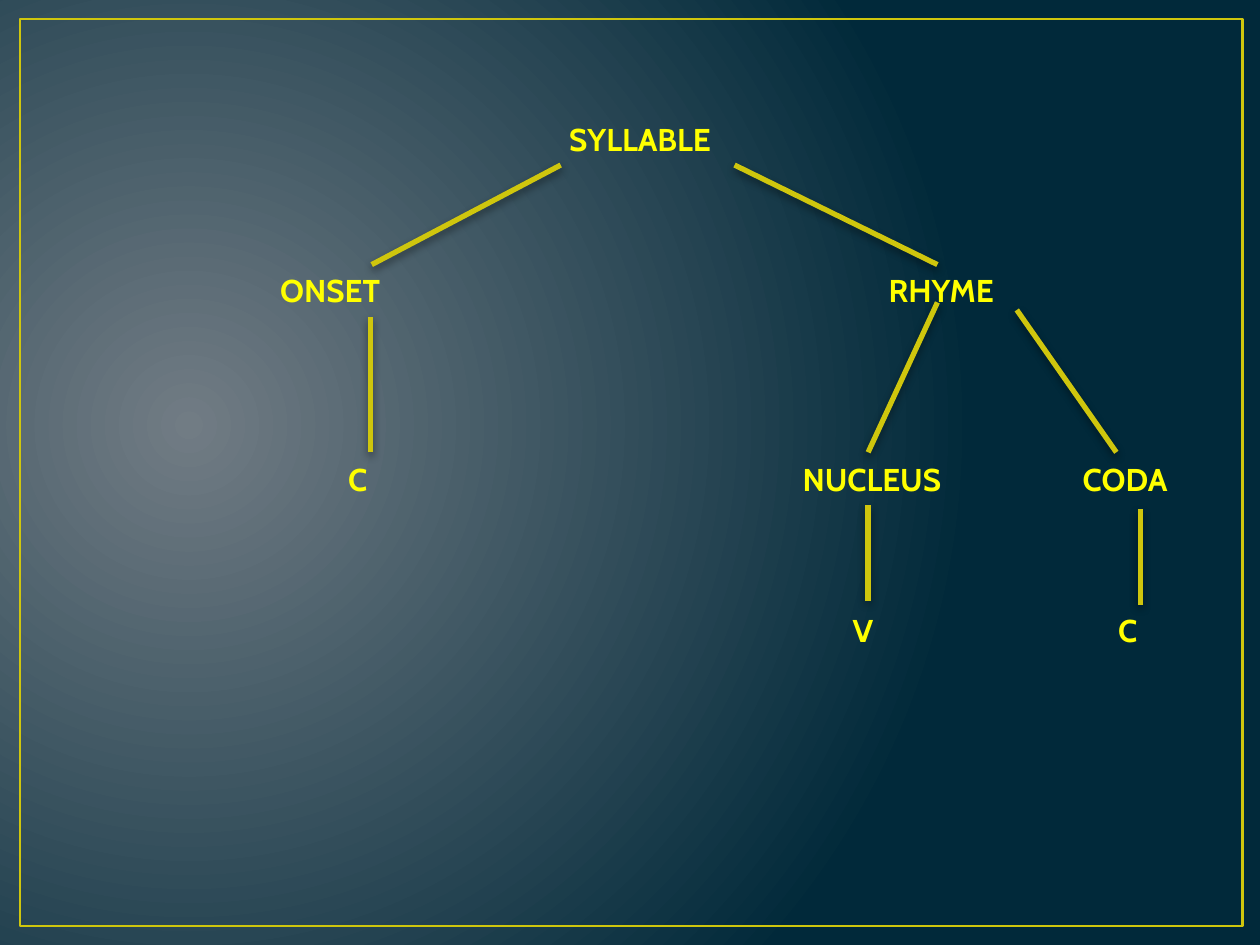
from pptx import Presentation
from pptx.dml.color import RGBColor
from pptx.enum.shapes import MSO_CONNECTOR as Connector, MSO_SHAPE as Shape
from pptx.enum.text import MSO_ANCHOR as Anchor, PP_ALIGN as Align
from pptx.oxml import parse_xml
from pptx.oxml.ns import nsdecls, qn
from pptx.util import Inches, Pt

GOLD = RGBColor(0xCF, 0xC6, 0x0D)
YELLOW = RGBColor(0xFF, 0xFF, 0x00)
GREY = RGBColor(0x71, 0x7C, 0x84)
NAVY = RGBColor(0x01, 0x29, 0x3A)

LABEL_FONT = {"name": "Cabin", "size": Pt(18), "bold": True}
LABEL_FRAME = {
    "word_wrap": True, "vertical_anchor": Anchor.MIDDLE,
    "margin_left": 0, "margin_right": 0, "margin_top": 0, "margin_bottom": 0,
}
LABEL_WIDTH, LABEL_HEIGHT = 1.6, 0.3
ROOT_ROW, BRANCH_ROW, PART_ROW, SOUND_ROW = 1.1, 2.3, 3.8, 5.0

LABELS = [
    ("SYLLABLE", 5.08, ROOT_ROW),
    ("ONSET", 2.62, BRANCH_ROW),
    ("RHYME", 7.47, BRANCH_ROW),
    ("C", 2.84, PART_ROW),
    ("NUCLEUS", 6.92, PART_ROW),
    ("CODA", 8.93, PART_ROW),
    ("V", 6.85, SOUND_ROW),
    ("C", 8.95, SOUND_ROW),
]
BRANCHES = [
    (4.45, 1.31, 2.95, 2.1),
    (5.83, 1.31, 7.44, 2.1),
    (2.94, 2.52, 2.94, 3.59),
    (6.89, 4.01, 6.89, 4.77),
    (9.05, 4.04, 9.05, 4.8),
    (7.44, 2.4, 6.89, 3.59),
    (8.07, 2.46, 8.86, 3.59),
]
RADIAL = f"""<a:path {nsdecls('a')} path="circle">
  <a:fillToRect l="15000" t="50000" r="85000" b="60000"/>
</a:path>"""
SHADOW = f"""<a:effectLst {nsdecls('a')}>
  <a:outerShdw blurRad="{Pt(5)}" dist="{Pt(2)}" dir="5400000" rotWithShape="0">
    <a:srgbClr val="000000"><a:alpha val="43000"/></a:srgbClr>
  </a:outerShdw>
</a:effectLst>"""

presentation = Presentation()
presentation.slide_width = Inches(10)
presentation.slide_height = Inches(7.5)
slide = presentation.slides.add_slide(presentation.slide_layouts[6])

background = slide.background.fill
background.gradient()
for stop, position, color in zip(background.gradient_stops, (0, 1), (GREY, NAVY)):
    stop.position = position
    stop.color.rgb = color
gradient = slide.element.find(".//" + qn("a:gradFill"))
gradient.replace(gradient.find(qn("a:lin")), parse_xml(RADIAL))

border = slide.shapes.add_shape(
    Shape.RECTANGLE, Inches(0.16), Inches(0.15), Inches(9.7), Inches(7.2))
border.shadow.inherit = False
border.fill.background()
border.line.color.rgb = GOLD
border.line.width = Pt(1.5)

for text, center, middle in LABELS:
    label = slide.shapes.add_textbox(
        Inches(center - LABEL_WIDTH / 2), Inches(middle - LABEL_HEIGHT / 2),
        Inches(LABEL_WIDTH), Inches(LABEL_HEIGHT))
    for name, value in LABEL_FRAME.items():
        setattr(label.text_frame, name, value)
    paragraph = label.text_frame.paragraphs[0]
    paragraph.alignment = Align.CENTER
    run = paragraph.add_run()
    run.text = text
    for name, value in LABEL_FONT.items():
        setattr(run.font, name, value)
    run.font.color.rgb = YELLOW

for ends in BRANCHES:
    branch = slide.shapes.add_connector(Connector.STRAIGHT, *map(Inches, ends))
    branch.line.color.rgb = GOLD
    branch.line.width = Pt(3)
    branch.element.spPr.append(parse_xml(SHADOW))

presentation.save("out.pptx")
